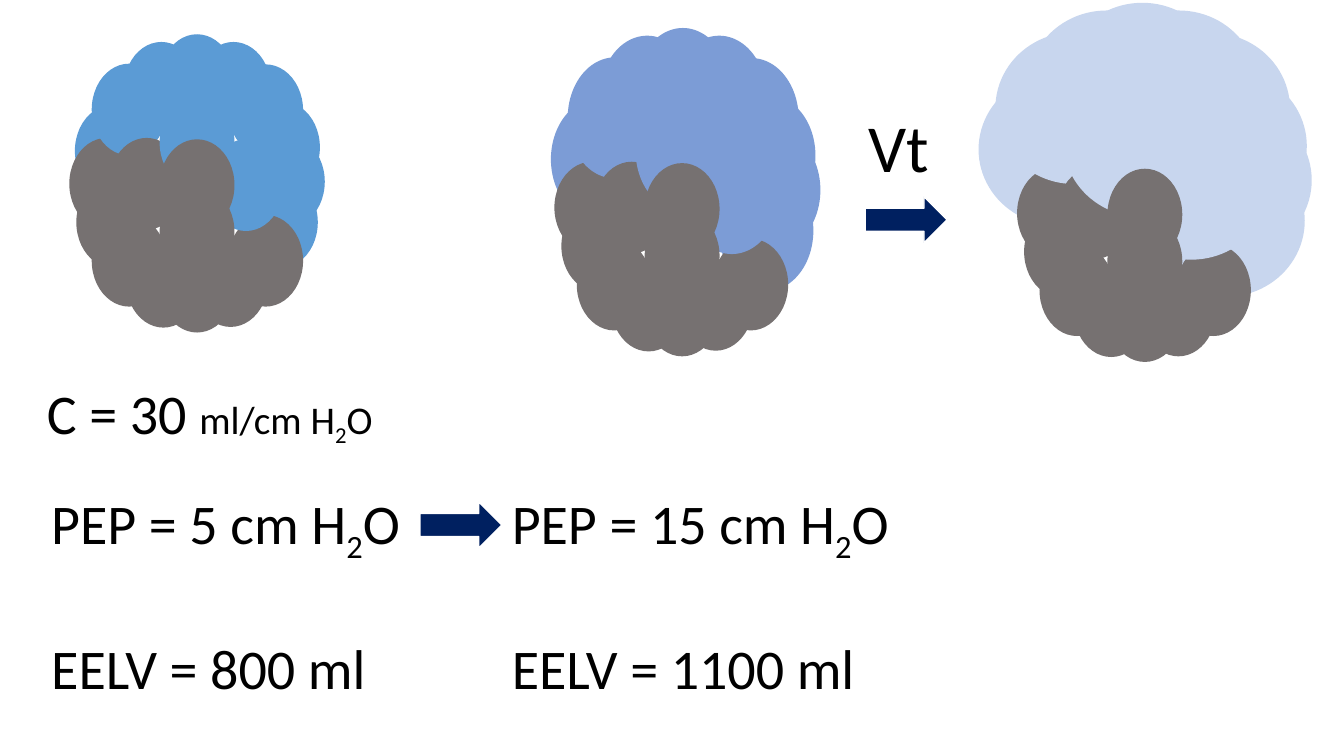
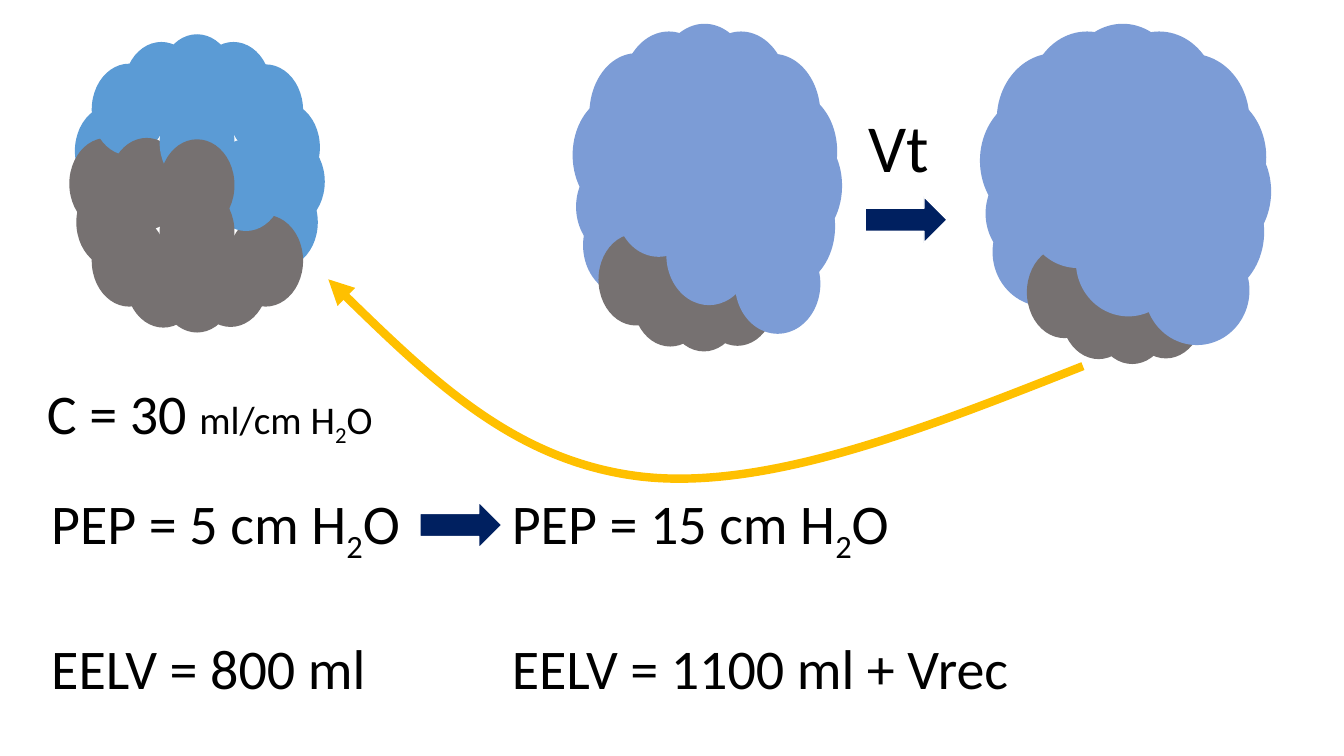
from dataclasses import dataclass
from typing import Any, NamedTuple

from lxml.etree import SubElement
from pptx import Presentation
from pptx.dml.color import RGBColor
from pptx.enum.shapes import MSO_SHAPE as Preset
from pptx.enum.text import MSO_AUTO_SIZE as AutoSize, PP_ALIGN as Align
from pptx.oxml.ns import qn
from pptx.util import Pt

FONT = "Calibri"
TEXT_COLOUR = "000000"
NAVY = "002060"
WHITE = "FFFFFF"
GOLD = "FFC000"
SKY = "5B9BD5"
PERIWINKLE = "7C9CD6"
PALE_BLUE = "C8D6EE"
GREY = "767171"

BODY_SIZE, UNIT_SIZE, LABEL_SIZE = 40, 28, 48
BODY_GAP = 48.8
BLANK_LAYOUT = 6


class Alveolus(NamedTuple):
    state: str
    x: float
    y: float


class Box(NamedTuple):
    left: float
    top: float
    width: float
    height: float


class Piece(NamedTuple):
    text: str
    size: float = BODY_SIZE
    subscript: bool = False


@dataclass(frozen=True)
class Look:
    """How far alveoli of one state are shifted, with their size and colour."""
    dx: float
    dy: float
    colour: str
    width: float = 53.5
    height: float = 65.5


Lung = dict[str, Look]
Line = list[Piece]

# Back to front; "recruitable" alveoli open only when recruitment takes place.
ALVEOLI = [
    Alveolus("aerated", 140, 30),
    Alveolus("aerated", 88.5, 30),
    Alveolus("aerated", 173.5, 126),
    Alveolus("aerated", 175, 72.5),
    Alveolus("collapsed", 138, 168),
    Alveolus("recruitable", 54.5, 126),
    Alveolus("collapsed", 90, 168.5),
    Alveolus("aerated", 53.5, 75),
    Alveolus("recruitable", 49.5, 98.5),
    Alveolus("collapsed", 114, 172),
    Alveolus("aerated", 178.5, 97),
    Alveolus("aerated", 65.5, 45.5),
    Alveolus("aerated", 163, 46),
    Alveolus("collapsed", 65.5, 153.5),
    Alveolus("aerated", 114, 24.5),
    Alveolus("recruitable", 163, 153.5),
    Alveolus("recruitable", 78, 98.5),
    Alveolus("aerated", 149, 99.5),
    Alveolus("recruitable", 114, 133),
    Alveolus("aerated", 114, 69),
    Alveolus("recruitable", 114, 99.5),
]


def lung(aerated: Look, collapsed: Look, recruitable: Look | None = None) -> Lung:
    return {"aerated": aerated, "collapsed": collapsed,
            "recruitable": recruitable or collapsed}


LOW_PEP = lung(Look(0, 0, SKY), Look(0, 0, GREY))
HIGH_PEP = lung(Look(340, -4.5, PERIWINKLE, 67.5, 86.5), Look(346.5, 17, GREY))
INFLATED = lung(Look(645.5, -22.5, PALE_BLUE, 113, 108.5), Look(677, 21, GREY))
RECRUITED = lung(Look(355.5, -7.5, PERIWINKLE, 67.5, 86.5),
                 Look(362, 13.5, GREY),
                 Look(362, 13.5, PERIWINKLE, 61, 71.5))
RECRUITED_INFLATED = lung(Look(646.5, -7.5, PERIWINKLE, 83, 94.5),
                          Look(668, 22.5, GREY),
                          Look(654.5, 15, PERIWINKLE, 75, 78))

PEP_ARROW = Box(300, 358.5, 58.5, 33)
VT_ARROW = Box(618, 140.5, 58.5, 33)

DEFLATION_START = (773.5, 261.5)
DEFLATION_CONTROLS = [(661, 306), (548.5, 350.5), (458.5, 340.5),
                      (368.5, 330), (301.5, 265), (234.5, 199.5)]
DEFLATION_HEIGHT = 142


def rgb(colour: str) -> RGBColor:
    return RGBColor.from_string(colour)


def apply(target: Any, values: dict[str, Any]) -> None:
    for name, value in values.items():
        setattr(target, name, value)


def pts(lengths: tuple[float, ...]) -> list[Pt]:
    return [Pt(length) for length in lengths]


def add_preset(shapes: Any, preset: Preset, box: Box, colour: str,
               outline: str | None = None) -> None:
    shape = shapes.add_shape(preset, *pts(box))
    shape.shadow.inherit = False
    shape.fill.solid()
    shape.fill.fore_color.rgb = rgb(colour)
    if outline:
        shape.line.color.rgb = rgb(outline)
        shape.line.width = Pt(1)
    else:
        shape.line.fill.background()


def add_lung(slide: Any, looks: Lung) -> None:
    group = slide.shapes.add_group_shape()
    for alveolus in ALVEOLI:
        look = looks[alveolus.state]
        box = Box(alveolus.x + look.dx, alveolus.y + look.dy, look.width, look.height)
        add_preset(group.shapes, Preset.OVAL, box, look.colour)


def water(prefix: str, size: float = BODY_SIZE) -> Line:
    """Return the pieces of a text ending in H2O with a lowered 2."""
    return [Piece(prefix + "H", size), Piece("2", size, True), Piece("O", size)]


def add_text(slide: Any, box: Box, lines: list[Line], align: Align = Align.LEFT) -> None:
    frame = slide.shapes.add_textbox(*pts(box)).text_frame
    apply(frame, {"word_wrap": True, "auto_size": AutoSize.SHAPE_TO_FIT_TEXT})
    for index, line in enumerate(lines):
        paragraph = frame.add_paragraph() if index else frame.paragraphs[0]
        paragraph.alignment = align
        if index:
            paragraph.space_before = Pt(BODY_GAP)
        for piece in line:
            run = paragraph.add_run()
            run.text = piece.text
            apply(run.font, {"name": FONT, "size": Pt(piece.size)})
            run.font.color.rgb = rgb(TEXT_COLOUR)
            if piece.subscript:
                run.font._element.set("baseline", "-25000")


def add_deflation_curve(slide: Any) -> None:
    """Draw the curved arrow by turning each three segments into one Bézier."""
    builder = slide.shapes.build_freeform(*pts(DEFLATION_START))
    builder.add_line_segments([tuple(pts(point)) for point in DEFLATION_CONTROLS],
                              close=False)
    curve = builder.convert_to_shape()
    curve.shadow.inherit = False
    curve.fill.background()
    curve.line.color.rgb = rgb(GOLD)
    curve.line.width = Pt(6)
    SubElement(curve.line._get_or_add_ln(), qn("a:tailEnd"), type="triangle")

    outline = next(curve._element.iter(qn("a:path")))
    segments = outline.findall(qn("a:lnTo"))
    for first in range(0, len(segments), 3):
        bezier = SubElement(outline, qn("a:cubicBezTo"))
        for segment in segments[first:first + 3]:
            bezier.append(segment[0])
            outline.remove(segment)
    curve.height = Pt(DEFLATION_HEIGHT)
    outline.set("h", str(curve.height))


def add_lung_slide(deck: Any, lungs: list[Lung], volume: str, width: float) -> Any:
    slide = deck.slides.add_slide(deck.slide_layouts[BLANK_LAYOUT])
    add_text(slide, Box(26.5, 266.5, 351.5, 55.5),
             [[Piece("C = 30 "), *water("ml/cm ", UNIT_SIZE)]])
    for looks in lungs:
        add_lung(slide, looks)
    add_text(slide, Box(29.5, 345.5, 351.5, 152.5),
             [water("PEP = 5 cm "), [Piece("EELV = 800 ml")]])
    add_text(slide, Box(358.5, 345.5, width, 152.5),
             [water("PEP = 15 cm "), [Piece(volume)]])
    for arrow in (PEP_ARROW, VT_ARROW):
        add_preset(slide.shapes, Preset.RIGHT_ARROW, arrow, NAVY, WHITE)
    add_text(slide, Box(595.5, 72, 93.5, 65.5),
             [[Piece("Vt", LABEL_SIZE)]], Align.CENTER)
    return slide


def main() -> None:
    deck = Presentation()
    apply(deck, {"slide_width": Pt(960), "slide_height": Pt(540)})
    add_lung_slide(deck, [LOW_PEP, HIGH_PEP, INFLATED], "EELV = 1100 ml", 351.5)
    recruitment = add_lung_slide(deck, [LOW_PEP, RECRUITED, RECRUITED_INFLATED],
                                 "EELV = 1100 ml + Vrec", 463.5)
    add_deflation_curve(recruitment)
    deck.save("out.pptx")


if __name__ == "__main__":
    main()
